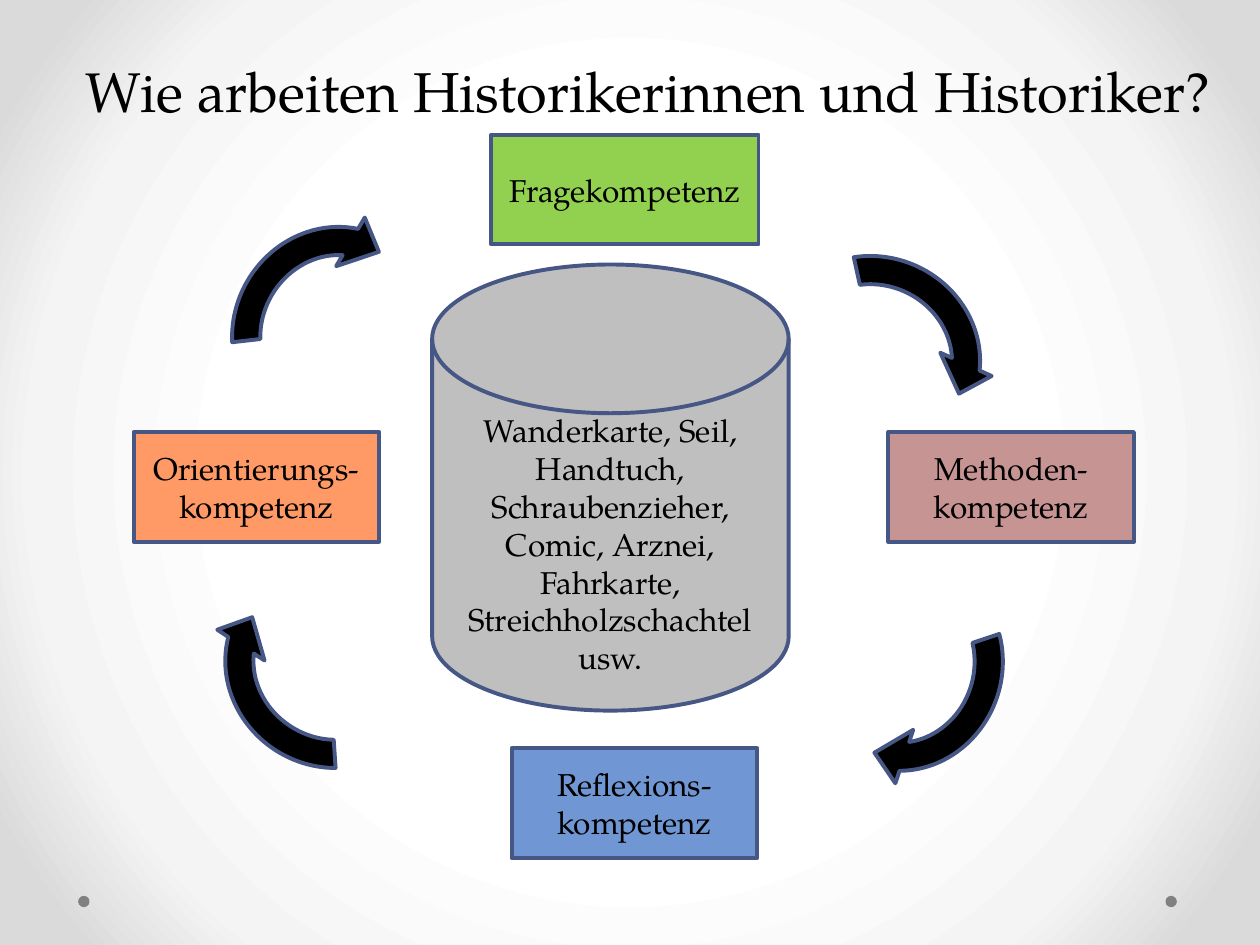
from dataclasses import dataclass

from pptx import Presentation
from pptx.dml.color import RGBColor
from pptx.enum.shapes import MSO_SHAPE as Shape
from pptx.enum.text import MSO_ANCHOR as Anchor, PP_ALIGN as Align
from pptx.oxml import parse_xml
from pptx.util import Inches, Pt


@dataclass(frozen=True)
class Theme:
    font: str = "TeX Gyre Pagella"
    title_size: int = 32
    body_size: int = 18
    title_leading: int = 58
    outline_width: float = 2.25
    ink: str = "000000"
    outline: str = "475785"
    dot: str = "808080"
    store: str = "BFBFBF"
    question: str = "92D050"
    method: str = "C79494"
    reflection: str = "7097D3"
    orientation: str = "FF9966"
    glow: tuple = ((50, "FFFFFF"), (76, "F4F4F4"), (92, "DADADA"))


THEME = Theme()
DRAWING_NS = "http://schemas.openxmlformats.org/drawingml/2006/main"
ARROW_BEND = (0.125, 11.423, 204.577, 139.845, 0.125)


def paint_background(slide):
    fill = slide.background.fill
    fill.gradient()
    stops = "".join(
        f'<a:gs pos="{position * 1000}"><a:srgbClr val="{color}"/></a:gs>'
        for position, color in THEME.glow
    )
    glow = parse_xml(
        f'<a:gradFill xmlns:a="{DRAWING_NS}" rotWithShape="1">'
        f'<a:gsLst>{stops}</a:gsLst><a:path path="circle">'
        '<a:fillToRect l="50000" t="50000" r="50000" b="50000"/>'
        "</a:path></a:gradFill>"
    )
    linear = slide.background._cSld.find(f".//{{{DRAWING_NS}}}gradFill")
    linear.getparent().replace(linear, glow)


def write(frame, text, size=THEME.body_size, anchor=Anchor.MIDDLE,
          leading=None, top_inset=0.05):
    frame.word_wrap = True
    frame.vertical_anchor = anchor
    frame.margin_top = Inches(top_inset)
    frame.text = text
    for paragraph in frame.paragraphs:
        paragraph.alignment = Align.CENTER
        if leading:
            paragraph.line_spacing = Pt(leading)
        for run in paragraph.runs:
            run.font.name = THEME.font
            run.font.size = Pt(size)
            run.font.color.rgb = RGBColor.from_string(THEME.ink)


def add_figure(slide, kind, left, top, width, height, color, outlined=True):
    figure = slide.shapes.add_shape(
        kind, Inches(left), Inches(top), Inches(width), Inches(height))
    figure.shadow.inherit = False
    figure.fill.solid()
    figure.fill.fore_color.rgb = RGBColor.from_string(color)
    if outlined:
        figure.line.color.rgb = RGBColor.from_string(THEME.outline)
        figure.line.width = Pt(THEME.outline_width)
    else:
        figure.line.fill.background()
    return figure


def add_competence(slide, text, left, top, color, width=1.95):
    competence = add_figure(
        slide, Shape.RECTANGLE, left, top, width, 0.87, color)
    write(competence.text_frame, text)


def add_cycle_arrow(slide, left, top, rotation):
    arrow = add_figure(
        slide, Shape.CIRCULAR_ARROW, left, top, 1.9, 1.79, THEME.ink)
    for index, value in enumerate(ARROW_BEND):
        arrow.adjustments[index] = value
    arrow.rotation = rotation


def add_title(slide, text):
    title = slide.shapes.add_textbox(
        Inches(0.5), Inches(0.13), Inches(9.3), Inches(0.79))
    write(title.text_frame, text, size=THEME.title_size, anchor=Anchor.TOP,
          leading=THEME.title_leading)


def add_source_store(slide, text):
    store = add_figure(slide, Shape.FLOWCHART_MAGNETIC_DISK,
                       3.43, 2.1, 2.83, 3.54, THEME.store)
    write(store.text_frame, text, top_inset=0.35)


def main():
    deck = Presentation()
    deck.slide_width, deck.slide_height = Inches(10), Inches(7.5)
    slide = deck.slides.add_slide(deck.slide_layouts[6])
    paint_background(slide)

    for left in (0.62, 9.25):
        add_figure(slide, Shape.OVAL, left, 7.11, 0.09, 0.09, THEME.dot,
                   outlined=False)

    add_competence(slide, "Fragekompetenz", 3.9, 1.07, THEME.question,
                   width=2.12)
    add_competence(slide, "Methoden-kompetenz", 7.05, 3.43, THEME.method)
    add_competence(slide, "Reflexions-kompetenz", 4.06, 5.94,
                   THEME.reflection)
    add_competence(slide, "Orientierungs-\nkompetenz", 1.06, 3.43,
                   THEME.orientation)

    for left, top, rotation in (
        (6, 1.93, 24.4),
        (6.22, 4.39, 108.5),
        (1.66, 4.4, 213.1),
        (1.69, 1.73, 300.4),
    ):
        add_cycle_arrow(slide, left, top, rotation)

    add_title(slide, "Wie arbeiten Historikerinnen und Historiker?")
    add_source_store(
        slide,
        "Wanderkarte, Seil, Handtuch, Schraubenzieher, Comic, Arznei, "
        "Fahrkarte, Streichholzschachtel\nusw.")

    deck.save("out.pptx")


if __name__ == "__main__":
    main()
